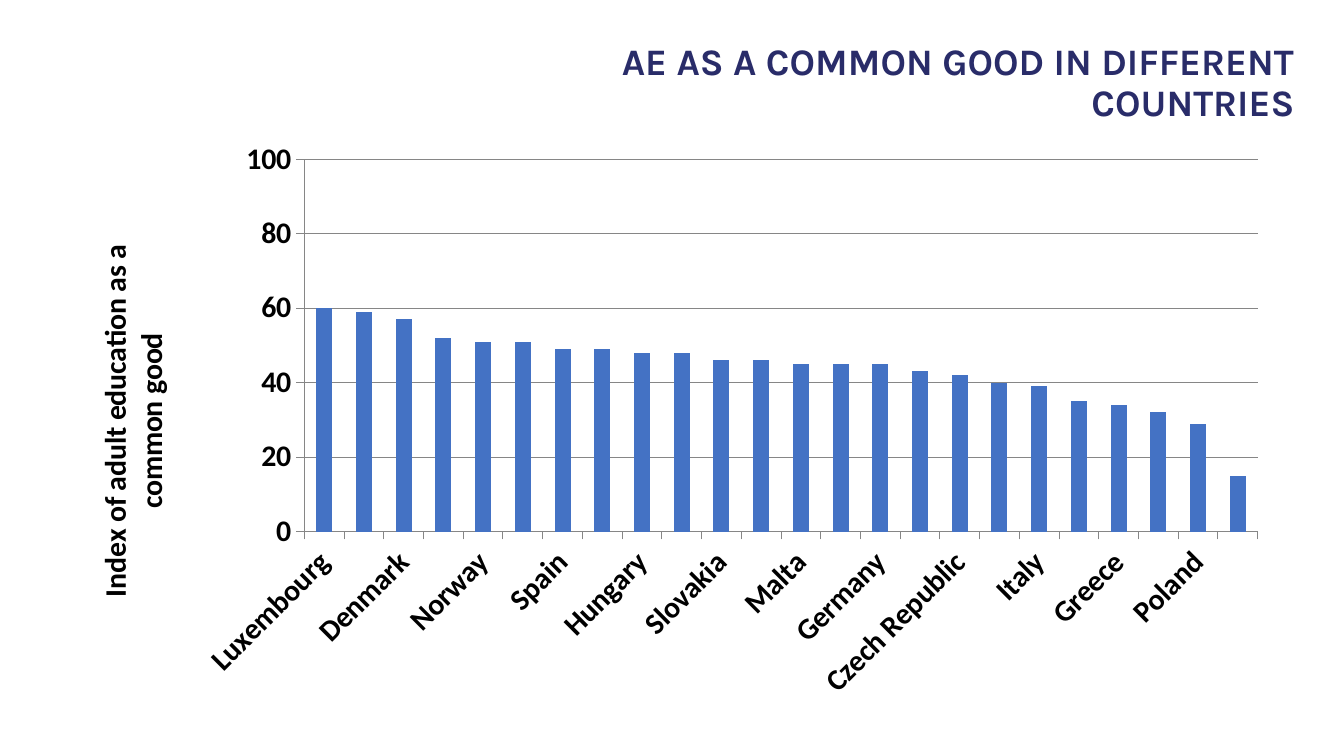
from lxml import etree
from pptx import Presentation
from pptx.chart.data import CategoryChartData
from pptx.dml.color import RGBColor
from pptx.enum.chart import XL_CHART_TYPE as Kind, XL_TICK_MARK as Tick
from pptx.enum.text import MSO_ANCHOR as Anchor, PP_ALIGN as Align
from pptx.oxml.ns import qn
from pptx.util import Inches, Pt

TITLE = "AE AS A COMMON GOOD IN DIFFERENT COUNTRIES"
AXIS = "Index of adult education as a common good"
SCORES = {
    "Luxembourg": 60, "Sweden": 59, "Denmark": 57, "Finland": 52,
    "Norway": 51, "Netherlands": 51, "Spain": 49, "Belgium": 49,
    "Hungary": 48, "France": 48, "Slovakia": 46, "Cyprus": 46,
    "Malta": 45, "Austria": 45, "Germany": 45, "Estonia": 43,
    "Czech Republic": 42, "Slovenia": 40, "Italy": 39, "Latvia": 35,
    "Greece": 34, "Lithuania": 32, "Poland": 29, "Romania": 15,
}
NAVY, BLUE, GREY, BLACK = "292C69", "4472C4", "868686", "000000"


def paint(color, code):
    color.rgb = RGBColor.from_string(code)


def style(font, size, face, code):
    font.size, font.name, font.bold = Pt(size), face, True
    paint(font.color, code)


def add_text(slide, text, box, size=20, face="Karla", code=NAVY, align=Align.RIGHT):
    frame = slide.shapes.add_textbox(*map(Inches, box)).text_frame
    frame.word_wrap = True
    frame.vertical_anchor = Anchor.MIDDLE
    para = frame.paragraphs[0]
    para.alignment, para.line_spacing = align, 0.9
    run = para.add_run()
    run.text = text
    style(run.font, size, face, code)


def layout(**parts):
    """Build a manual chart layout from fractions of the chart area."""
    root = etree.Element(qn("c:layout"))
    manual = etree.SubElement(root, qn("c:manualLayout"))
    for tag, val in parts.items():
        etree.SubElement(manual, qn(f"c:{tag}")).set("val", str(val))
    return root


def place(parent, index, **parts):
    """Put a manual layout in parent, in place of any old one."""
    for old in parent.findall(qn("c:layout")):
        parent.remove(old)
    parent.insert(index, layout(**parts))


def add_bars(slide, box):
    data = CategoryChartData()
    data.categories = list(SCORES)
    data.add_series("Series 1", list(SCORES.values()))
    chart = slide.shapes.add_chart(
        Kind.COLUMN_CLUSTERED, *map(Inches, box), data).chart
    chart.has_legend = chart.has_title = False
    style(chart.font, 16, "Calibri", BLACK)

    plot = chart.plots[0]
    plot.gap_width, plot.vary_by_categories = 150, False
    fill = plot.series[0].format.fill
    fill.solid()
    paint(fill.fore_color, BLUE)

    cats, vals = chart.category_axis, chart.value_axis
    vals.minimum_scale, vals.maximum_scale, vals.major_unit = 0, 100, 20
    vals.has_major_gridlines = True
    for line in (cats.format.line, vals.format.line,
                 vals.major_gridlines.format.line):
        line.width = Pt(0.5)
        paint(line.color, GREY)
    for axis in (cats, vals):
        axis.major_tick_mark, axis.minor_tick_mark = Tick.OUTSIDE, Tick.NONE

    # Slanted labels, every second country named
    cats.tick_labels.font.bold = True
    xml = cats._element
    xml.find(qn("c:txPr")).find(qn("a:bodyPr")).set("rot", "-2700000")
    skip = etree.Element(qn("c:tickLblSkip"))
    skip.set("val", "2")
    xml.find(qn("c:noMultiLvlLbl")).addprevious(skip)

    title = vals.axis_title
    frame = title.text_frame
    frame.text = AXIS
    style(frame.paragraphs[0].runs[0].font, 16, "Calibri", BLACK)
    body = frame._txBody.find(qn("a:bodyPr"))
    body.set("rot", "-5400000")
    body.set("vert", "horz")

    place(title._element, 1, xMode="edge", yMode="edge", x=0.02, y=0.19)
    place(chart._chartSpace.chart.plotArea, 0, layoutTarget="inner",
          xMode="edge", yMode="edge", x=0.197, y=0.052, w=0.783, h=0.64)


deck = Presentation()
deck.slide_width = Inches(10)
deck.slide_height = deck.slide_width * 9 // 16
slide = deck.slides.add_slide(deck.slide_layouts[6])
add_text(slide, TITLE, (3.43, 0.33, 6.3, 0.59))
add_bars(slide, (0.48, 0.96, 9.06, 4.33))
deck.save("out.pptx")
